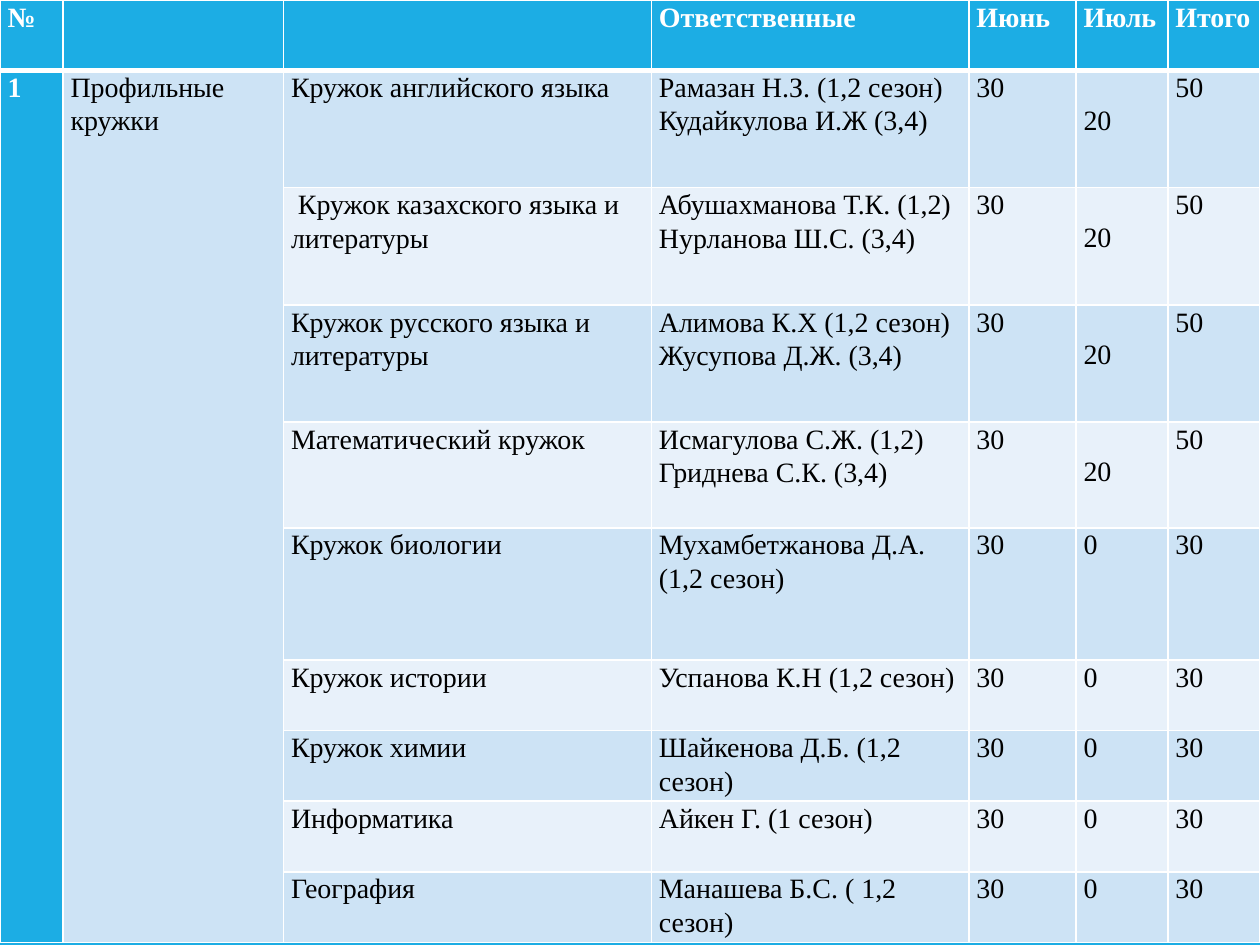
import pptx
import pptx.util
import pptx.dml.color
import pptx.oxml.ns
import lxml.etree

COLORS = {
    "accent": "1CADE4",
    "dark_band": "CDE3F5",
    "light_band": "E8F1FA",
    "white": "FFFFFF",
    "black": "000000",
}
FONT = "Times New Roman"
FONT_SIZE = 16
LINE_SPACING = 1.07
LINE_HEIGHT = 0.26
SIDE_MARGIN = 0.06
SLIDE_SIZE = (10, 7.5)

COLUMN_WIDTHS = [0.5, 1.75, 2.92, 2.52, 0.85, 0.73, 0.73]
ROW_HEIGHTS = [0.56] + [0.93] * 3 + [0.84, 1.05] + [0.56] * 4
JULY_COLUMN = 5

HEADER = ["№", "", "", "Ответственные", "Июнь", "Июль", "Итого"]
GROUP = ["1", "Профильные кружки"]
CLUBS = [
    ("Кружок английского языка", ["Рамазан Н.З. (1,2 сезон)", "Кудайкулова И.Ж (3,4)"], 30, 20),
    (" Кружок казахского языка и литературы", ["Абушахманова Т.К. (1,2)", "Нурланова Ш.С. (3,4)"], 30, 20),
    ("Кружок русского языка и литературы", ["Алимова К.Х (1,2 сезон)", "Жусупова Д.Ж. (3,4)"], 30, 20),
    ("Математический кружок", ["Исмагулова С.Ж. (1,2)", "Гриднева С.К. (3,4)"], 30, 20),
    ("Кружок биологии", ["Мухамбетжанова Д.А. (1,2 сезон)"], 30, 0),
    ("Кружок истории", ["Успанова К.Н (1,2 сезон)"], 30, 0),
    ("Кружок химии", ["Шайкенова Д.Б. (1,2 сезон)"], 30, 0),
    ("Информатика", ["Айкен Г. (1 сезон)"], 30, 0),
    ("География", ["Манашева Б.С. ( 1,2 сезон)"], 30, 0),
]


def color(name):
    return pptx.dml.color.RGBColor.from_string(COLORS[name])


def set_borders(cell, row):
    widths = {"L": 1, "R": 1, "T": 3 if row == 1 else 1, "B": 3 if row == 0 else 1}
    properties = cell._tc.get_or_add_tcPr()
    for side, width in widths.items():
        line = lxml.etree.SubElement(properties, pptx.oxml.ns.qn(f"a:ln{side}"))
        line.set("w", str(pptx.util.Pt(width)))
        fill = lxml.etree.SubElement(line, pptx.oxml.ns.qn("a:solidFill"))
        lxml.etree.SubElement(fill, pptx.oxml.ns.qn("a:srgbClr")).set("val", COLORS["white"])


def style_cell(cell, row, column):
    set_borders(cell, row)
    if row == 0 or column == 0:
        fill = "accent"
    elif column == 1 or row % 2:
        fill = "dark_band"
    else:
        fill = "light_band"
    cell.fill.solid()
    cell.fill.fore_color.rgb = color(fill)
    cell.margin_left = cell.margin_right = pptx.util.Inches(SIDE_MARGIN)
    cell.margin_top = cell.margin_bottom = 0


def write_cell(cell, lines, emphasized):
    for index, text in enumerate(lines):
        frame = cell.text_frame
        paragraph = frame.add_paragraph() if index else frame.paragraphs[0]
        paragraph.line_spacing = LINE_SPACING
        run = paragraph.add_run()
        run.text = text
        run.font.name = FONT
        run.font.size = pptx.util.Pt(FONT_SIZE)
        run.font.bold = emphasized
        run.font.color.rgb = color("white" if emphasized else "black")


def main():
    presentation = pptx.Presentation()
    presentation.slide_width, presentation.slide_height = map(pptx.util.Inches, SLIDE_SIZE)
    slide = presentation.slides.add_slide(presentation.slide_layouts[6])
    slide.background.fill.solid()
    slide.background.fill.fore_color.rgb = color("accent")

    rows = [[[text] if text else [] for text in HEADER]]
    for index, (club, teachers, june, july) in enumerate(CLUBS):
        group = [[text] for text in GROUP] if index == 0 else [[], []]
        rows.append(group + [[club], teachers, [str(june)], [str(july)], [str(june + july)]])

    table = slide.shapes.add_table(
        len(rows), len(HEADER), 0, 0,
        pptx.util.Inches(sum(COLUMN_WIDTHS)), pptx.util.Inches(sum(ROW_HEIGHTS)),
    ).table
    for column, width in zip(table.columns, COLUMN_WIDTHS):
        column.width = pptx.util.Inches(width)
    for row, height in zip(table.rows, ROW_HEIGHTS):
        row.height = pptx.util.Inches(height)

    for row, contents in enumerate(rows):
        for column, lines in enumerate(contents):
            cell = table.cell(row, column)
            style_cell(cell, row, column)
            write_cell(cell, lines, row == 0 or column == 0)
            if column == JULY_COLUMN and lines == ["20"]:
                cell.margin_top = pptx.util.Inches(LINE_HEIGHT)
    for column in range(len(GROUP)):
        table.cell(1, column).merge(table.cell(len(CLUBS), column))

    presentation.save("out.pptx")


if __name__ == "__main__":
    main()
